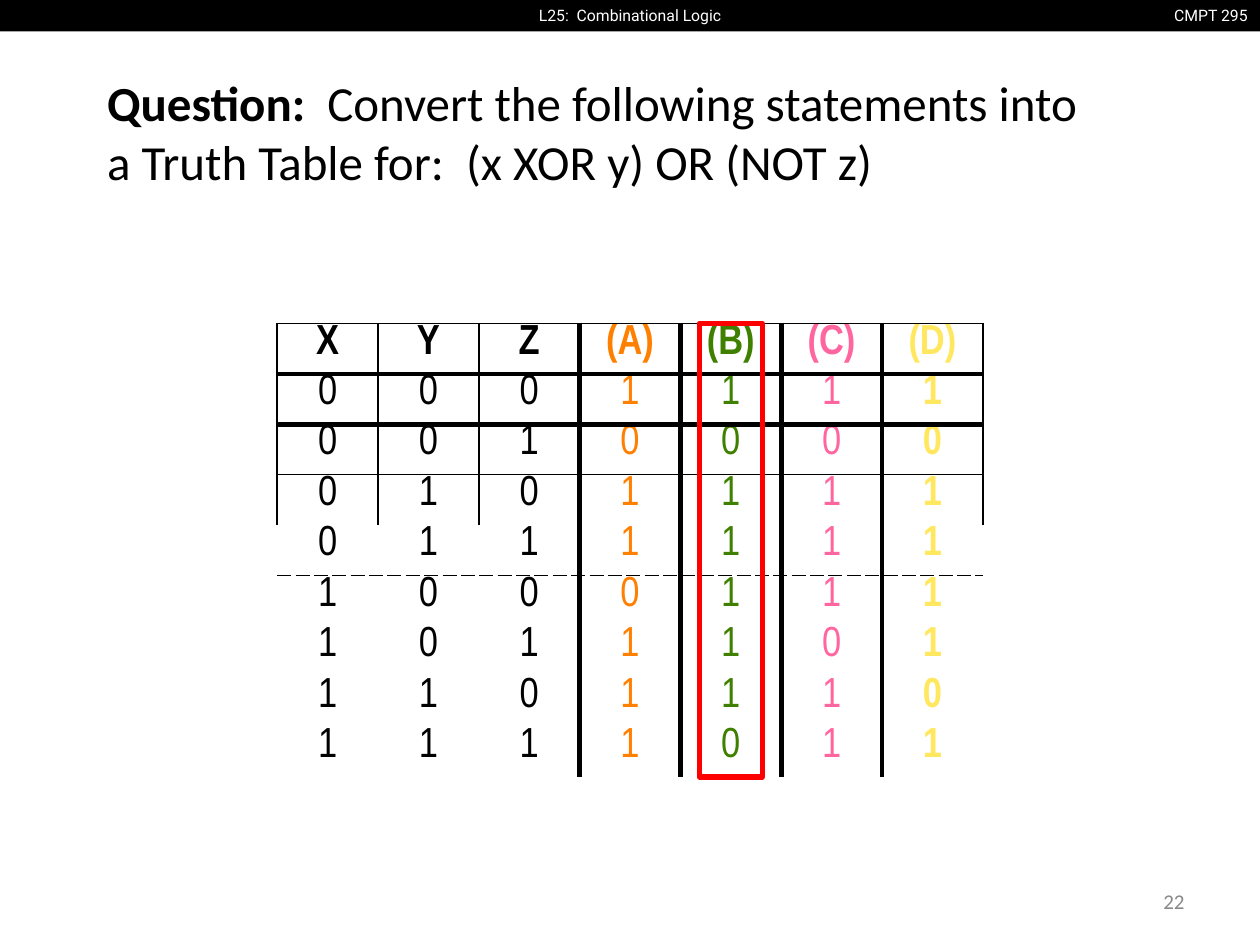
"""Builds the truth table slide for a combinational logic question."""
from lxml.etree import SubElement
from pptx import Presentation
from pptx.dml.color import RGBColor
from pptx.enum.shapes import MSO_SHAPE
from pptx.enum.text import MSO_ANCHOR, MSO_AUTO_SIZE, PP_ALIGN
from pptx.oxml.ns import qn
from pptx.util import Pt

HUES = {
    "black": "000000", "white": "FFFFFF", "gray": "888888", "red": "FF0000",
    "orange": "FF8000", "green": "408000", "pink": "FF66A0", "yellow": "FFE860",
}
HEADS = ["X", "Y", "Z", "(A)", "(B)", "(C)", "(D)"]
INKS = ["black"] * 3 + ["orange", "green", "pink", "yellow"]
ROWS = ["0001111", "0010000", "0101111", "0111111",
        "1000111", "1011101", "1101110", "1111011"]
RULES = {0: (1, "solid"), 1: (3, "solid"), 2: (3, "solid"),
         3: (1, "solid"), 5: (1, "dash")}
NONE = (0, "solid")


def add_run(para, text, size, face, hue, bold=False):
    run = para.add_run()
    run.text = text
    run.font.size = Pt(size)
    run.font.name = face
    run.font.bold = bold
    run.font.color.rgb = RGBColor.from_string(HUES[hue])


def add_edge(cell, side, width, dash):
    line = SubElement(cell._tc.get_or_add_tcPr(), qn(f"a:ln{side}"), w=str(Pt(width)))
    if width:
        fill = SubElement(line, qn("a:solidFill"))
        SubElement(fill, qn("a:srgbClr"), val=HUES["black"])
        SubElement(line, qn("a:prstDash"), val=dash)
    else:
        SubElement(line, qn("a:noFill"))


deck = Presentation()
deck.slide_width, deck.slide_height = Pt(720), Pt(540)
slide = deck.slides.add_slide(deck.slide_layouts[5])
shapes = slide.shapes

bar = shapes.add_shape(MSO_SHAPE.RECTANGLE, Pt(0), Pt(0), Pt(720), Pt(18))
bar.shadow.inherit = False
bar.fill.solid()
bar.fill.fore_color.rgb = RGBColor.from_string(HUES["black"])
bar.line.fill.background()

LABELS = [
    ("CMPT 295", 661.7, 0, 58.3, 18, PP_ALIGN.RIGHT, 9, "Roboto", "white", False),
    ("L25:  Combinational Logic", 285, 0, 150, 18, PP_ALIGN.CENTER, 9, "Roboto", "white", False),
    ("22", 516, 500.5, 168, 28.75, PP_ALIGN.RIGHT, 12, "Calibri", "gray", True),
]
for text, left, top, width, height, align, size, face, hue, wrap in LABELS:
    box = shapes.add_textbox(Pt(left), Pt(top), Pt(width), Pt(height))
    frame = box.text_frame
    frame.word_wrap = wrap
    frame.vertical_anchor = MSO_ANCHOR.MIDDLE if wrap else MSO_ANCHOR.TOP
    para = frame.paragraphs[0]
    para.alignment = align
    add_run(para, text, size, face, hue)

title = shapes.title
title.left, title.top, title.width, title.height = Pt(54), Pt(38), Pt(605), Pt(202)
frame = title.text_frame
frame.word_wrap = True
frame.auto_size = MSO_AUTO_SIZE.NONE
frame.vertical_anchor = MSO_ANCHOR.TOP
para = frame.paragraphs[0]
para.alignment = PP_ALIGN.LEFT
add_run(para, "Question:  ", 28, "Calibri", "black", True)
add_run(para, "Convert the following statements into ", 28, "Calibri", "black")
para.add_line_break()
add_run(para, "a Truth Table for:  (x XOR y) OR (NOT z)", 28, "Calibri", "black")

grid = [HEADS] + [list(row) for row in ROWS]
table = shapes.add_table(len(grid), len(HEADS), Pt(158.4), Pt(184.8),
                         Pt(403.2), Pt(259.2)).table
table.first_row = table.horz_banding = False
for col in table.columns:
    col.width = Pt(57.6)
for r, row in enumerate(grid):
    table.rows[r].height = Pt(28.8)
    thin = (1, "solid") if r < 4 else NONE
    for c, text in enumerate(row):
        cell = table.cell(r, c)
        cell.margin_left = cell.margin_right = Pt(0)
        cell.margin_top = cell.margin_bottom = Pt(0)
        para = cell.text_frame.paragraphs[0]
        para.alignment = PP_ALIGN.CENTER
        add_run(para, text, 24, "Arial Narrow", INKS[c], r == 0 or c == 6)
        for side, i in (("L", c), ("R", c + 1)):
            add_edge(cell, side, *((3, "solid") if 3 <= i <= 6 else thin))
        for side, i in (("T", r), ("B", r + 1)):
            add_edge(cell, side, *RULES.get(i, NONE))
        cell.fill.background()

mark = shapes.add_shape(MSO_SHAPE.RECTANGLE, Pt(399.6), Pt(184.8), Pt(36), Pt(259.2))
mark.shadow.inherit = False
mark.fill.background()
mark.line.color.rgb = RGBColor.from_string(HUES["red"])
mark.line.width = Pt(3)

deck.save("out.pptx")
